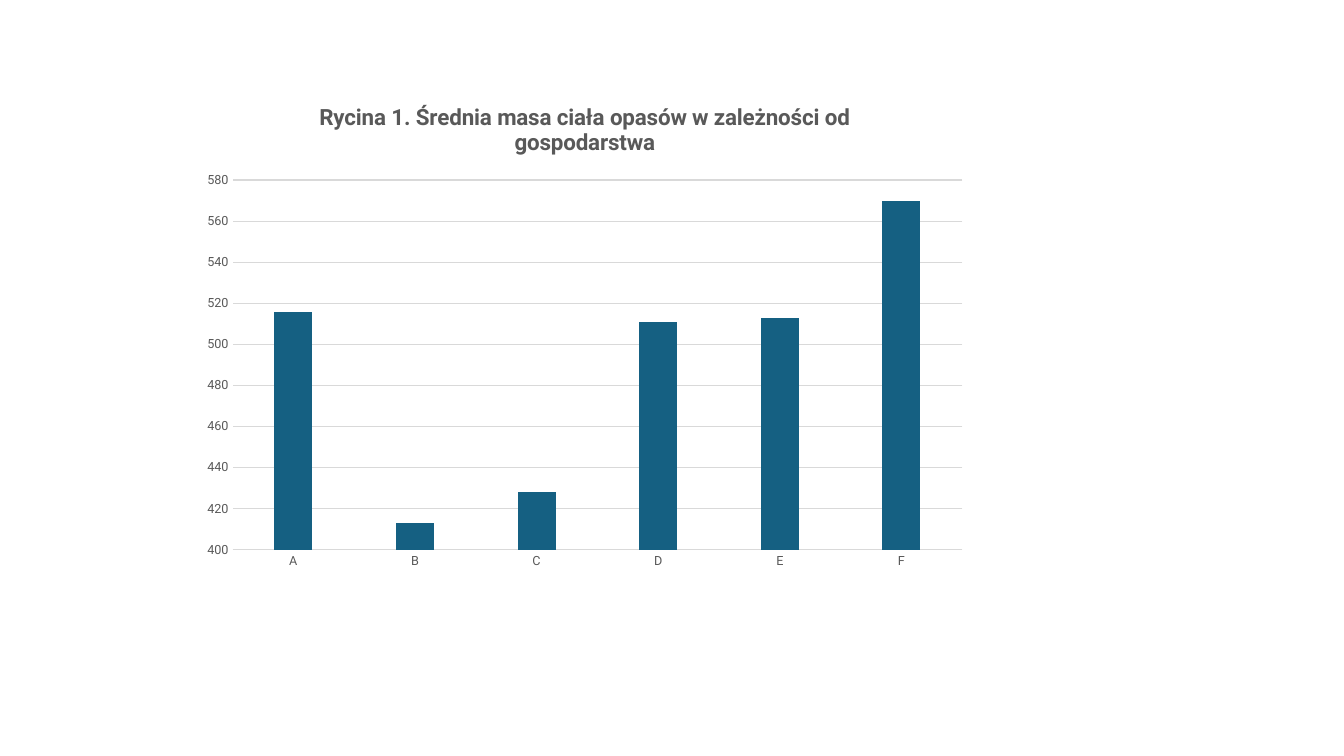
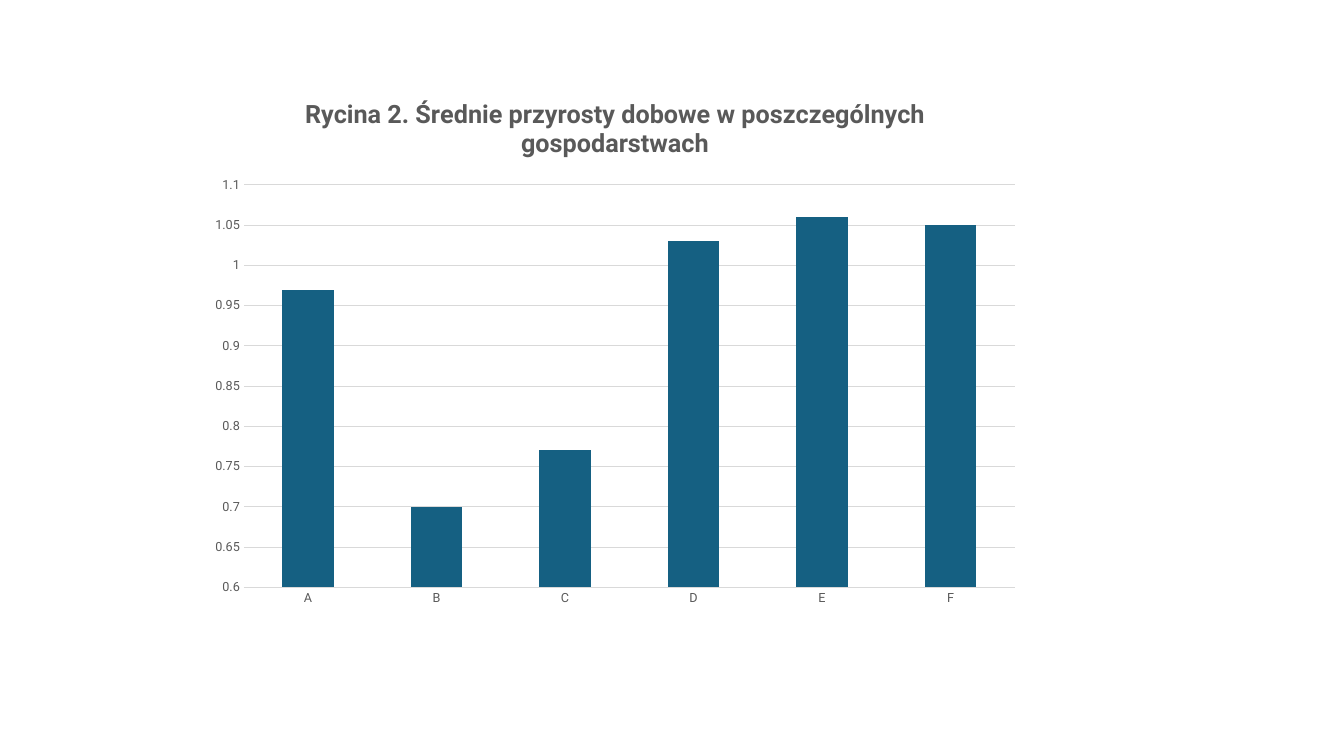
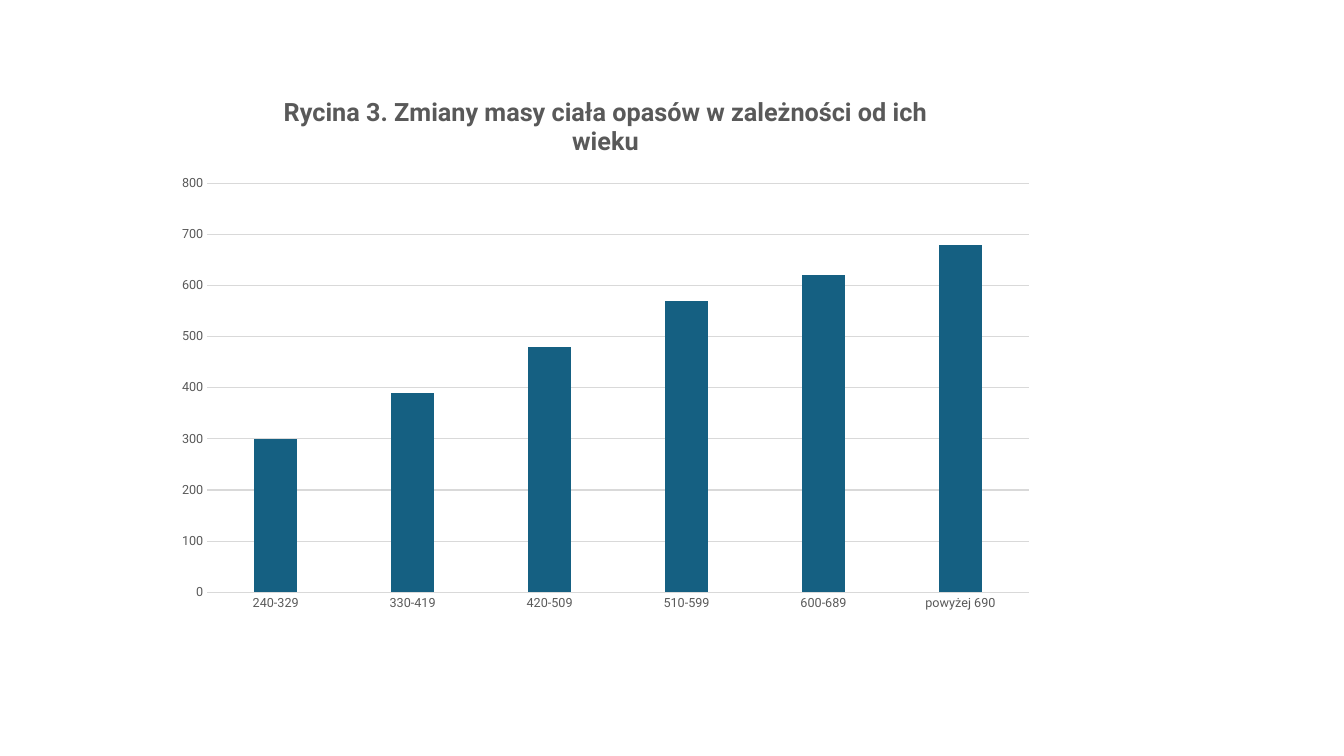
from pptx import Presentation
from pptx.chart.data import CategoryChartData
from pptx.dml.color import RGBColor
from pptx.enum.chart import XL_CHART_TYPE, XL_TICK_MARK
from pptx.util import Inches, Pt

C = {"bar": "156082", "text": "595959", "base": "000000", "grid": "D9D9D9"}
FONT = "Roboto"


def set_font(font, size, color="text", bold=False):
    font.name, font.size, font.bold = FONT, Pt(size), bold
    font.color.rgb = RGBColor.from_string(C[color])


def write(tf, text, **fmt):
    r = tf.paragraphs[0].add_run()
    r.text = text
    set_font(r.font, **fmt)


farms = list("ABCDEF")
ages = ["240-329", "330-419", "420-509", "510-599", "600-689", "powyżej 690"]

# One entry per slide; scale is minimum, maximum and step of the value axis
figures = [
    dict(title="Rycina 1. Średnia masa ciała opasów w zależności od gospodarstwa",
         size=16, box=(1.9, 0.83, 7.8, 4.91), scale=(400, 580, 20),
         gap=219, overlap=-27, cats=farms, vals=[516, 413, 428, 511, 513, 570]),
    dict(title="Rycina 2. Średnie przyrosty dobowe w poszczególnych gospodarstwach",
         size=18, box=(1.97, 0.76, 8.26, 5.36), scale=(0.6, 1.1, 0.05),
         gap=150, overlap=0, cats=farms, vals=[0.97, 0.7, 0.77, 1.03, 1.06, 1.05]),
    dict(title="Rycina 3. Zmiany masy ciała opasów w zależności od ich wieku",
         size=18, box=(1.63, 0.74, 8.75, 5.43), scale=(0, 800, 100),
         gap=219, overlap=-27, cats=ages, vals=[300, 390, 480, 570, 620, 680]),
]

prs = Presentation()
prs.slide_width, prs.slide_height = Inches(13.33), Inches(7.5)

for fig in figures:
    s = prs.slides.add_slide(prs.slide_layouts[6])
    data = CategoryChartData()
    data.categories = fig["cats"]
    data.add_series("Series 1", fig["vals"])
    box = [Inches(v) for v in fig["box"]]
    chart = s.shapes.add_chart(XL_CHART_TYPE.COLUMN_CLUSTERED, *box, data).chart
    chart.has_legend = False
    set_font(chart.font, 10, color="base")

    # Title
    chart.has_title = True
    chart.chart_title.include_in_layout = False
    write(chart.chart_title.text_frame, fig["title"], size=fig["size"], bold=True)

    # Bars
    plot = chart.plots[0]
    plot.vary_by_categories = False
    plot.gap_width, plot.overlap = fig["gap"], fig["overlap"]
    fill = plot.series[0].format.fill
    fill.solid()
    fill.fore_color.rgb = RGBColor.from_string(C["bar"])

    # Axes and gridlines
    cat, val = chart.category_axis, chart.value_axis
    for axis in (cat, val):
        axis.major_tick_mark = axis.minor_tick_mark = XL_TICK_MARK.NONE
        set_font(axis.tick_labels.font, 9)
    val.minimum_scale, val.maximum_scale, val.major_unit = fig["scale"]
    val.has_major_gridlines = True
    val.format.line.fill.background()
    for line in (cat.format.line, val.major_gridlines.format.line):
        line.width = Pt(0.75)
        line.color.rgb = RGBColor.from_string(C["grid"])

prs.save("out.pptx")
